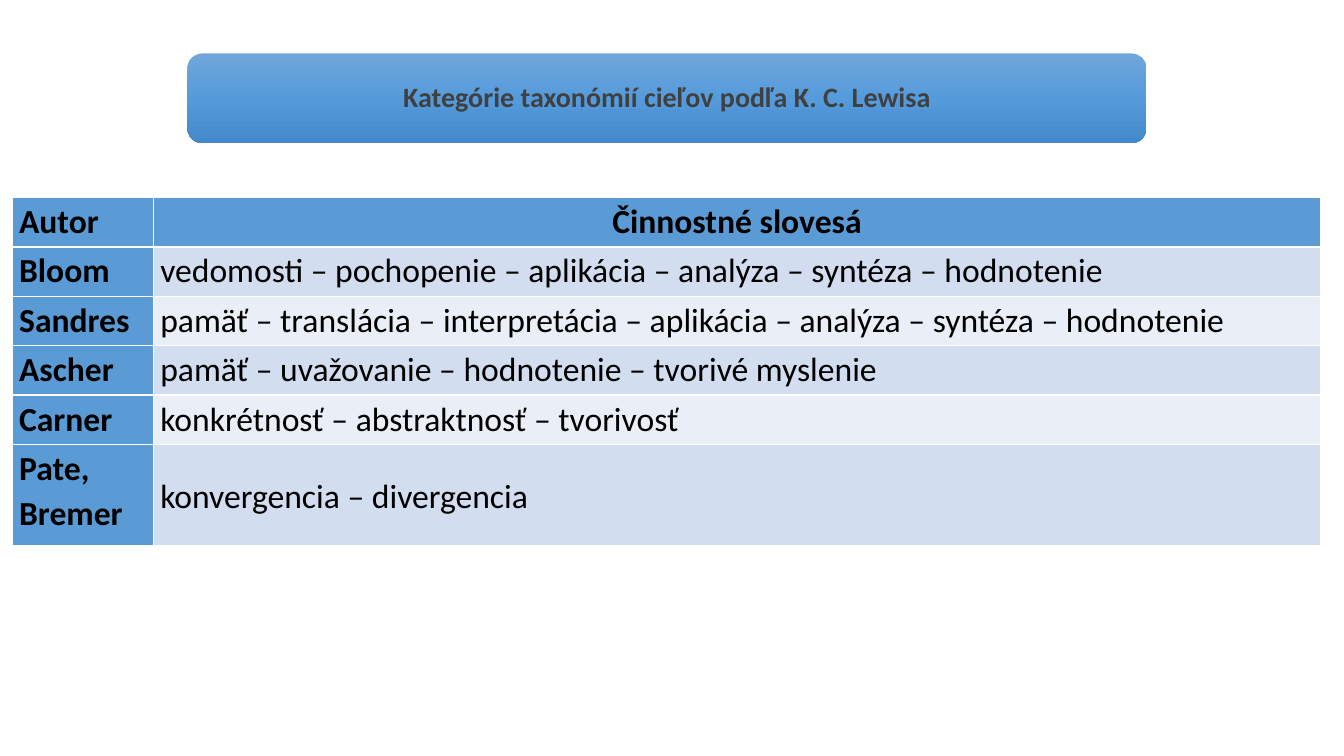
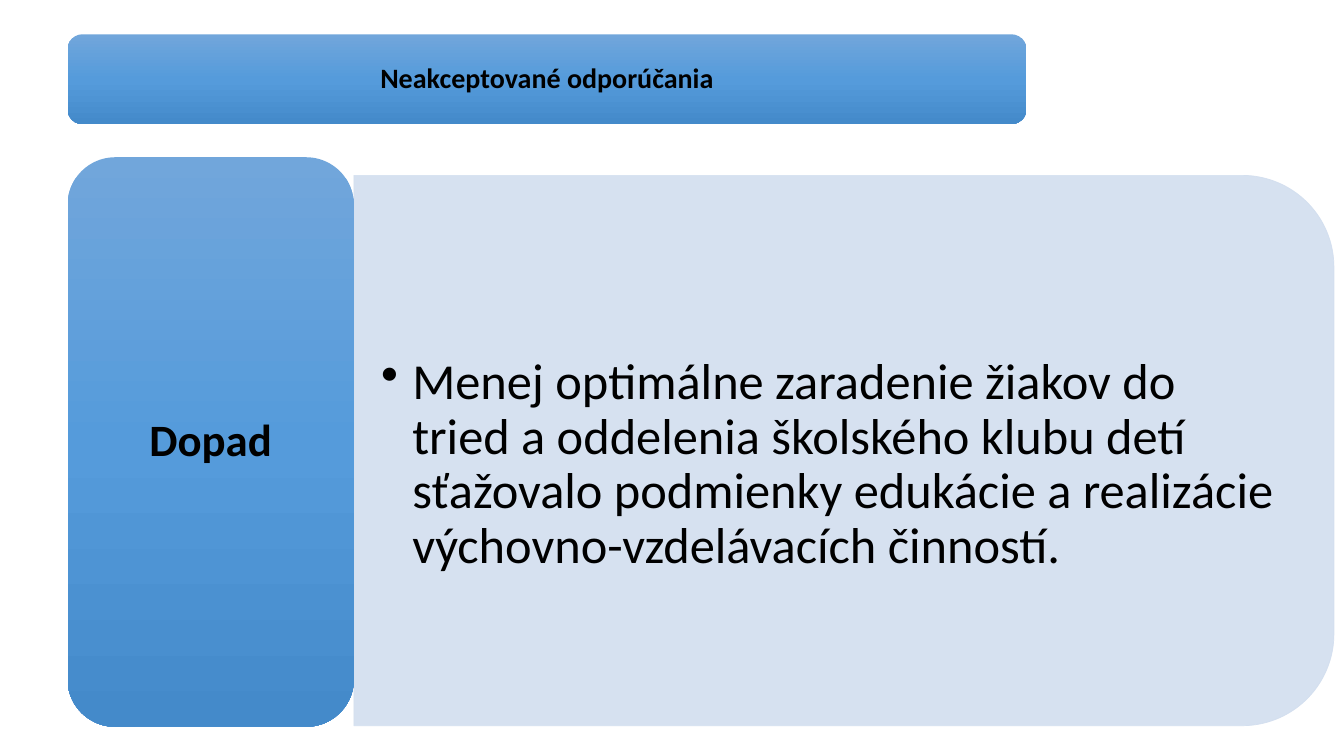
"""Build two slides on taxonomies of educational objectives and ignored recommendations."""
from lxml.etree import SubElement
from pptx import Presentation
from pptx.dml.color import RGBColor
from pptx.enum.shapes import MSO_SHAPE as Shape
from pptx.enum.text import MSO_ANCHOR as Anchor, PP_ALIGN as Align
from pptx.oxml.ns import qn
from pptx.util import Inches, Pt

BLACK, GREY = "000000", "404040"
BLUE, PALE, PALER = "5B9BD5", "D2DEEF", "EAEFF7"
GRADIENT = [(0, "71A6DB"), (50, "559BDB"), (100, "448ACA")]
BAR_SIZE = (9.51, 0.89)


def write(frame, text, size, color=BLACK, bold=False, align=Align.LEFT, spacing=0.9):
    frame.text = text
    frame.word_wrap = True
    paragraph = frame.paragraphs[0]
    paragraph.alignment = align
    paragraph.line_spacing = spacing
    font = paragraph.runs[0].font
    font.name, font.size, font.bold = "Calibri", Pt(size), bold
    font.color.rgb = RGBColor.from_string(color)
    return paragraph


def add_gradient_label(slide, box, text, size, color=BLACK):
    label = slide.shapes.add_shape(Shape.ROUNDED_RECTANGLE, *map(Inches, box))
    label.shadow.inherit = False
    label.line.fill.background()
    label.fill.gradient()
    label.fill.gradient_angle = 270
    stops = label._element.spPr.find(qn("a:gradFill")).find(qn("a:gsLst"))
    stops.clear()
    for percent, shade in GRADIENT:
        stop = SubElement(stops, qn("a:gs"), pos=str(percent * 1000))
        SubElement(stop, qn("a:srgbClr"), val=shade)
    label.text_frame.vertical_anchor = Anchor.MIDDLE
    write(label.text_frame, text, size, color, True, Align.CENTER)


prs = Presentation()
prs.slide_width, prs.slide_height = Inches(13.33), Inches(7.5)
blank = prs.slide_layouts[6]

taxonomies = prs.slides.add_slide(blank)
add_gradient_label(taxonomies, (1.86, 0.53, *BAR_SIZE),
                   "Kategórie taxonómií cieľov podľa K. C. Lewisa", 20, GREY)

authors = [
    ("Autor", "Činnostné slovesá"),
    ("Bloom", "vedomosti – pochopenie – aplikácia – analýza – syntéza – hodnotenie"),
    ("Sandres", "pamäť – translácia – interpretácia – aplikácia – analýza – syntéza – hodnotenie"),
    ("Ascher", "pamäť – uvažovanie – hodnotenie – tvorivé myslenie"),
    ("Carner", "konkrétnosť – abstraktnosť – tvorivosť"),
    ("Pate, Bremer", "konvergencia – divergencia"),
]
row_heights = [0.49] * 5 + [1]
verbs = taxonomies.shapes.add_table(len(authors), 2, Inches(0.12), Inches(1.96),
                                    Inches(12.98), Inches(sum(row_heights))).table
for column, width in zip(verbs.columns, (1.4, 11.58)):
    column.width = Inches(width)
for r, (entry, height) in enumerate(zip(authors, row_heights)):
    verbs.rows[r].height = Inches(height)
    for c, text in enumerate(entry):
        cell = verbs.cell(r, c)
        heading = r == 0 or c == 0
        cell.margin_left = cell.margin_right = Inches(0.07)
        cell.margin_top = cell.margin_bottom = 0
        cell.fill.solid()
        cell.fill.fore_color.rgb = RGBColor.from_string(
            BLUE if heading else PALE if r % 2 else PALER)
        align = Align.CENTER if (r, c) == (0, 1) else Align.LEFT
        paragraph = write(cell.text_frame, text, 24, bold=heading, align=align, spacing=1.1)
        paragraph.space_before, paragraph.space_after = Pt(4), Pt(2)
verbs.cell(len(authors) - 1, 1).vertical_anchor = Anchor.MIDDLE

impact = prs.slides.add_slide(blank)
panel = impact.shapes.add_shape(Shape.ROUND_2_SAME_RECTANGLE, Inches(5.64), Inches(-0.39),
                                Inches(5.46), Inches(9.72))
panel.rotation = 90
panel.shadow.inherit = False
panel.fill.solid()
panel.fill.fore_color.rgb = panel.line.color.rgb = RGBColor.from_string(PALE)
panel.line.width = Pt(0.5)
for color in panel._element.spPr.iter(qn("a:srgbClr")):
    SubElement(color, qn("a:alpha"), val="90000")

consequence = impact.shapes.add_textbox(Inches(3.51), Inches(2.15), Inches(9.45), Inches(4.93))
frame = consequence.text_frame
frame.vertical_anchor = Anchor.MIDDLE
frame.margin_left = frame.margin_right = Inches(0.27)
frame.margin_top = frame.margin_bottom = Inches(0.14)
bullet = write(frame, "Menej optimálne zaradenie žiakov do tried a oddelenia školského klubu detí "
                      "sťažovalo podmienky edukácie a realizácie výchovno-vzdelávacích činností.", 36)
properties = bullet._p.get_or_add_pPr()
properties.set("marL", str(Inches(0.31)))
properties.set("indent", str(-Inches(0.31)))
SubElement(properties, qn("a:buChar"), char="•")

add_gradient_label(impact, (0.67, 1.56, 2.84, 5.65), "Dopad", 32)
add_gradient_label(impact, (0.67, 0.34, *BAR_SIZE), "Neakceptované odporúčania", 20)

prs.save("out.pptx")
